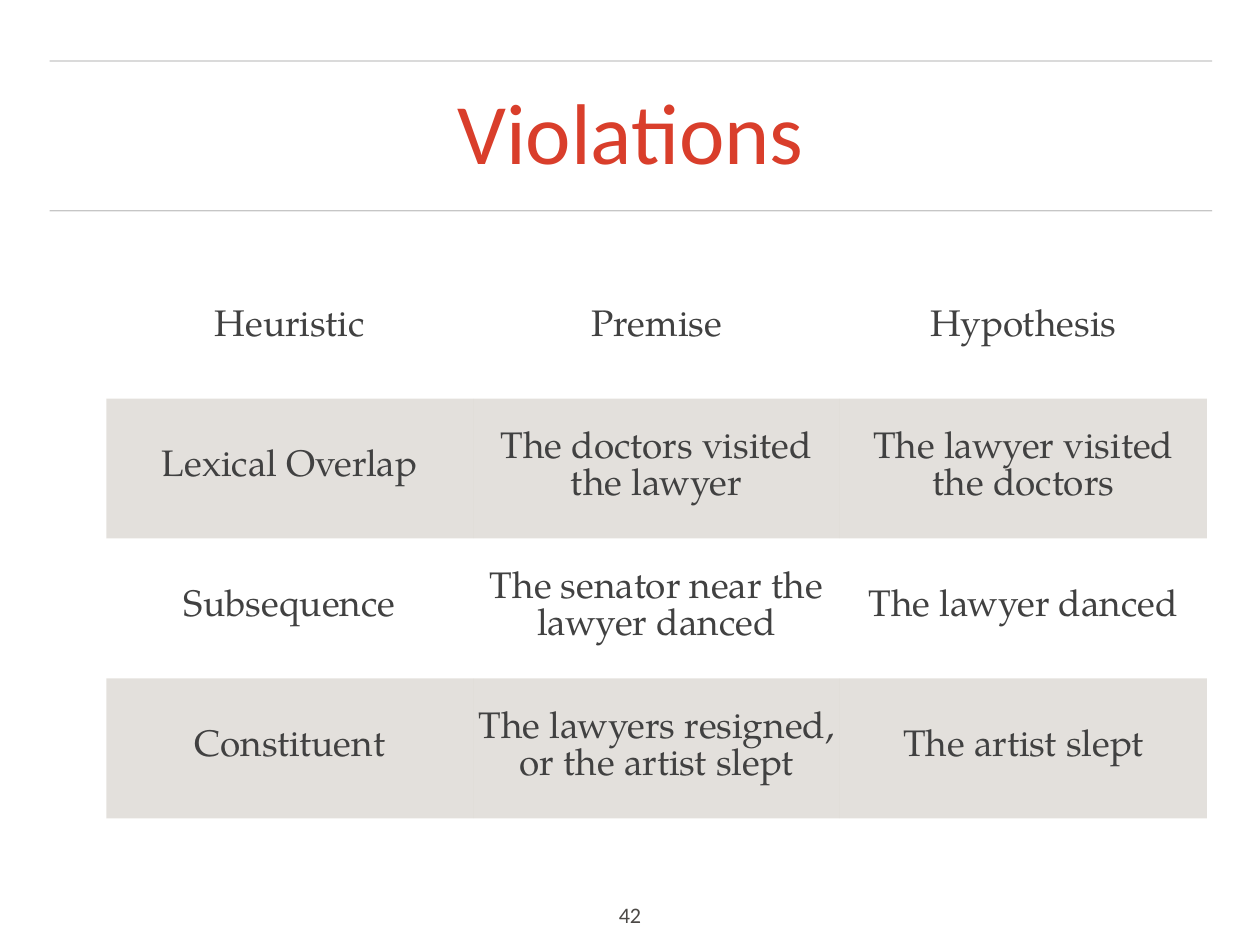
from lxml import etree
from pptx import Presentation
from pptx.dml.color import RGBColor
from pptx.enum.shapes import MSO_CONNECTOR
from pptx.enum.text import MSO_ANCHOR, PP_ALIGN
from pptx.oxml.ns import qn
from pptx.util import Pt

EMU_PER_PX = 9144
STRAIGHT = MSO_CONNECTOR.STRAIGHT
TOP, MIDDLE = MSO_ANCHOR.TOP, MSO_ANCHOR.MIDDLE
CENTER = PP_ALIGN.CENTER

RED = RGBColor(0xD9, 0x3E, 0x2B)
RULE_GRAY = RGBColor(0x44, 0x44, 0x44)
NUMBER_GRAY = RGBColor(0x4C, 0x49, 0x46)
TABLE_GRAY = RGBColor(0x41, 0x41, 0x41)
BAND_BEIGE = RGBColor(0xC9, 0xC3, 0xBA)
PLAIN_TABLE_STYLE = "{2D5ABB26-0587-4C30-8999-92F81FD0307C}"

ROWS = [
    ("Heuristic", "Premise", "Hypothesis"),
    ("Lexical Overlap", "The doctors visited the lawyer", "The lawyer visited the doctors"),
    ("Subsequence", "The senator near the lawyer danced", "The lawyer danced"),
    ("Constituent", "The lawyers resigned, or the artist slept", "The artist slept"),
]


def px(length):
    return round(length * EMU_PER_PX)


def set_opacity(properties, percent):
    """Make the solid colour inside a line or cell properties element translucent."""
    color = next(properties.iter(qn("a:srgbClr")))
    etree.SubElement(color, qn("a:alpha")).set("val", str(percent * 1000))


class SlideBuilder:
    heading_font = "Calibri"
    body_font = "TeX Gyre Pagella"
    inset = 6

    def __init__(self, slide):
        self.slide = slide

    def set_margins(self, holder):
        holder.margin_left = holder.margin_right = px(self.inset)
        holder.margin_top = holder.margin_bottom = px(self.inset)

    def style_paragraph(self, paragraph, font_name, size, color):
        paragraph.alignment = CENTER
        for run in paragraph.runs:
            run.font.name = font_name
            run.font.size = Pt(size)
            run.font.color.rgb = color

    def rule(self, left, right, y):
        line = self.slide.shapes.add_connector(STRAIGHT, px(left), px(y), px(right), px(y))
        line.line.width = Pt(1)
        line.line.color.rgb = RULE_GRAY
        properties = line._element.spPr
        set_opacity(properties, 30)
        etree.SubElement(properties, qn("a:effectLst"))

    def text(self, text, left, top, width, height, size, color, anchor=TOP, wrap=True, spacing=1.0):
        box = self.slide.shapes.add_textbox(px(left), px(top), px(width), px(height))
        frame = box.text_frame
        frame.text = text
        frame.word_wrap = wrap
        frame.vertical_anchor = anchor
        self.set_margins(frame)
        paragraph = frame.paragraphs[0]
        paragraph.line_spacing = spacing
        self.style_paragraph(paragraph, self.heading_font, size, color)

    def table(self, rows, left, top, column_width, row_height):
        """Add a table without borders whose every second row is shaded."""
        columns = len(rows[0])
        table = self.slide.shapes.add_table(
            len(rows), columns, px(left), px(top),
            px(column_width * columns), px(row_height * len(rows))).table
        table.first_row = table.horz_banding = False
        table._tbl.tblPr.find(qn("a:tableStyleId")).text = PLAIN_TABLE_STYLE
        for row_index, words in enumerate(rows):
            for column_index, text in enumerate(words):
                cell = table.cell(row_index, column_index)
                cell.text = text
                cell.vertical_anchor = MIDDLE
                self.set_margins(cell)
                self.style_paragraph(cell.text_frame.paragraphs[0], self.body_font, 30, TABLE_GRAY)
                if row_index % 2:
                    cell.fill.solid()
                    cell.fill.fore_color.rgb = BAND_BEIGE
                    set_opacity(cell._tc.tcPr, 50)
                else:
                    cell.fill.background()


def main():
    presentation = Presentation()
    presentation.slide_width = px(1422)
    presentation.slide_height = px(1067)
    builder = SlideBuilder(presentation.slides.add_slide(presentation.slide_layouts[6]))
    for y in (238, 69):
        builder.rule(56, 1368, y)
    builder.text("Violations", 56, 88, 1311, 133, 70, RED, anchor=MIDDLE, spacing=0.9)
    builder.text("42", 692, 1012, 38, 44, 18, NUMBER_GRAY, wrap=False)
    builder.table(ROWS, 120, 292, 414, 158)
    presentation.save("out.pptx")


if __name__ == "__main__":
    main()
